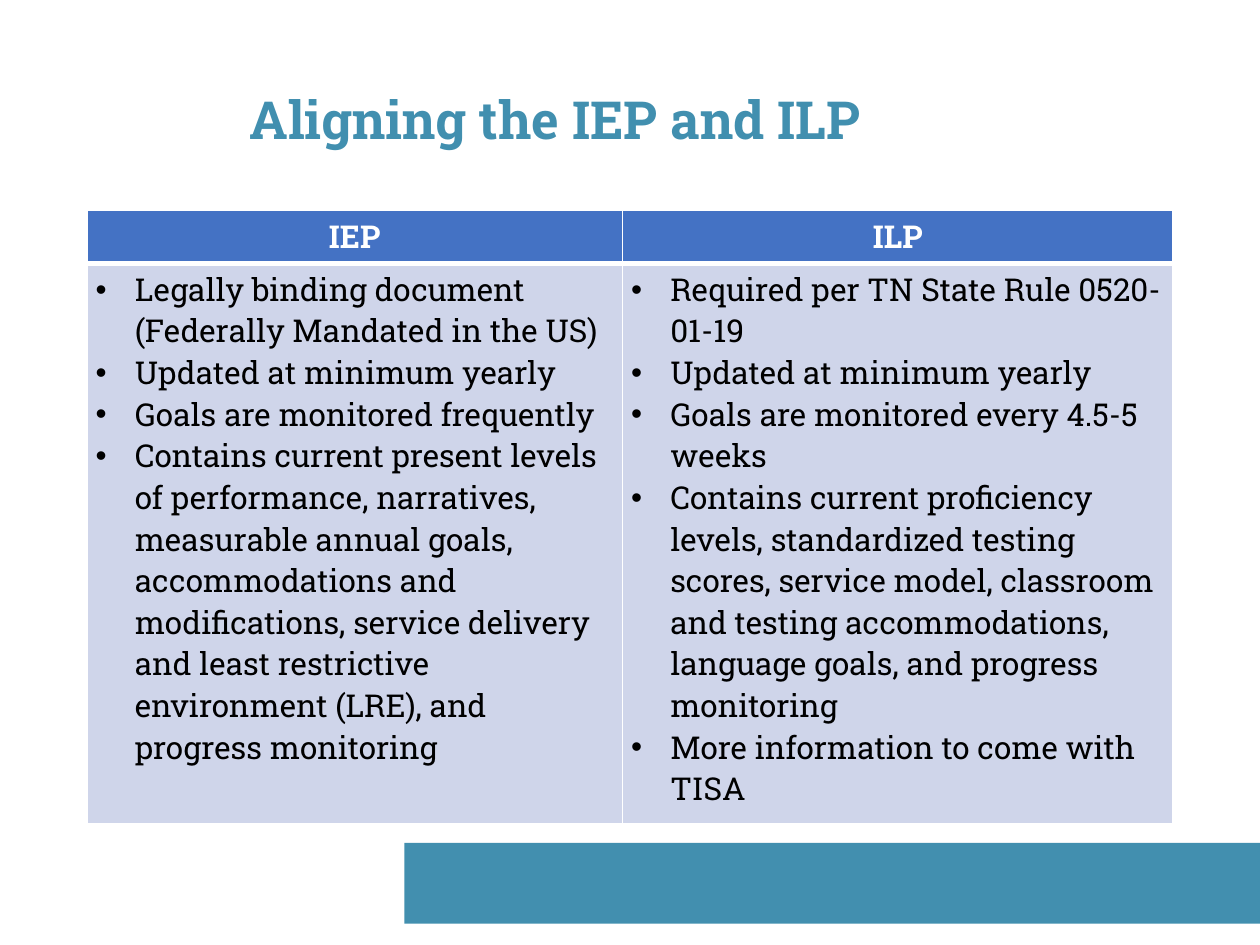
from lxml.etree import SubElement
from pptx import Presentation
from pptx.dml.color import RGBColor
from pptx.enum.shapes import MSO_SHAPE as SHAPE
from pptx.enum.text import MSO_ANCHOR as ANCHOR, PP_ALIGN as ALIGN
from pptx.oxml.ns import qn
from pptx.util import Inches, Pt

FONT = "Roboto Slab"
TEAL, BAR_TEAL = "418FAF", "428FAF"
BLUE, PALE, WHITE, BLACK = "4472C4", "CFD5EA", "FFFFFF", "000000"


def rgb(value):
    return RGBColor.from_string(value)


def write(p, text, size=18, color=BLACK, bold=False, align=None, spacing=None):
    p.alignment = align
    p.line_spacing = spacing
    r = p.add_run()
    r.text = text
    r.font.name, r.font.size, r.font.bold = FONT, Pt(size), bold
    r.font.color.rgb = rgb(color)


def add_bullet(p, indent=0.31):
    pPr = p._p.get_or_add_pPr()
    pPr.set("marL", str(Inches(indent)))
    pPr.set("indent", str(-Inches(indent)))
    SubElement(pPr, qn("a:buFont"), typeface="Arial")
    SubElement(pPr, qn("a:buChar"), char="•")


def set_borders(cell, **widths):
    tcPr = cell._tc.get_or_add_tcPr()
    for side in "LRTB":
        ln = SubElement(tcPr, qn(f"a:ln{side}"), w=str(Pt(widths.get(side, 1))))
        SubElement(SubElement(ln, qn("a:solidFill")), qn("a:srgbClr"), val=WHITE)


class Slide:
    def __init__(self, prs):
        self.s = prs.slides.add_slide(prs.slide_layouts[6])

    def bar(self, x, y, w, h, color):
        sp = self.s.shapes.add_shape(SHAPE.RECTANGLE, Inches(x), Inches(y), Inches(w), Inches(h))
        sp.shadow.inherit = False
        sp.fill.solid()
        sp.fill.fore_color.rgb = rgb(color)
        sp.line.fill.background()

    def title(self, x, y, w, h, text):
        tf = self.s.shapes.add_textbox(Inches(x), Inches(y), Inches(w), Inches(h)).text_frame
        tf.word_wrap = True
        tf.vertical_anchor = ANCHOR.BOTTOM
        write(tf.paragraphs[0], text, size=30, color=TEAL, bold=True,
              align=ALIGN.CENTER, spacing=0.9)

    def cell(self, cell, fill, **borders):
        cell.margin_left = cell.margin_right = Inches(0.07)
        cell.margin_top = cell.margin_bottom = Inches(0.04)
        set_borders(cell, **borders)
        cell.fill.solid()
        cell.fill.fore_color.rgb = rgb(fill)
        return cell.text_frame

    def table(self, x, y, widths, heights, columns):
        table = self.s.shapes.add_table(
            len(heights), len(widths), Inches(x), Inches(y),
            Inches(sum(widths)), Inches(sum(heights))).table
        for row, height in zip(table.rows, heights):
            row.height = Inches(height)
        for i, (head, points) in enumerate(columns.items()):
            table.columns[i].width = Inches(widths[i])
            tf = self.cell(table.cell(0, i), BLUE, B=3)
            write(tf.paragraphs[0], head, color=WHITE, bold=True, align=ALIGN.CENTER)
            tf = self.cell(table.cell(1, i), PALE, T=3)
            for n, point in enumerate(points):
                p = tf.add_paragraph() if n else tf.paragraphs[0]
                add_bullet(p)
                write(p, point)


def main():
    prs = Presentation()
    prs.slide_width, prs.slide_height = Inches(10), Inches(7.5)
    slide = Slide(prs)

    # Footer bar and title
    slide.bar(3.21, 6.69, 6.79, 0.64, BAR_TEAL)
    slide.title(0.69, 0.4, 7.43, 0.85, "Aligning the IEP and ILP")

    # Comparison table
    slide.table(0.69, 1.67, [4.25, 4.37], [0.42, 4.45], {
        "IEP": [
            "Legally binding document (Federally Mandated in the US)",
            "Updated at minimum yearly",
            "Goals are monitored frequently",
            "Contains current present levels of performance, narratives, "
            "measurable annual goals, accommodations and modifications, "
            "service delivery and least restrictive environment (LRE), "
            "and progress monitoring",
        ],
        "ILP": [
            "Required per TN State Rule 0520-01-19",
            "Updated at minimum yearly",
            "Goals are monitored every 4.5-5 weeks",
            "Contains current proficiency levels, standardized testing scores, "
            "service model, classroom and testing accommodations, "
            "language goals, and progress monitoring",
            "More information to come with TISA",
        ],
    })
    prs.save("out.pptx")


if __name__ == "__main__":
    main()
